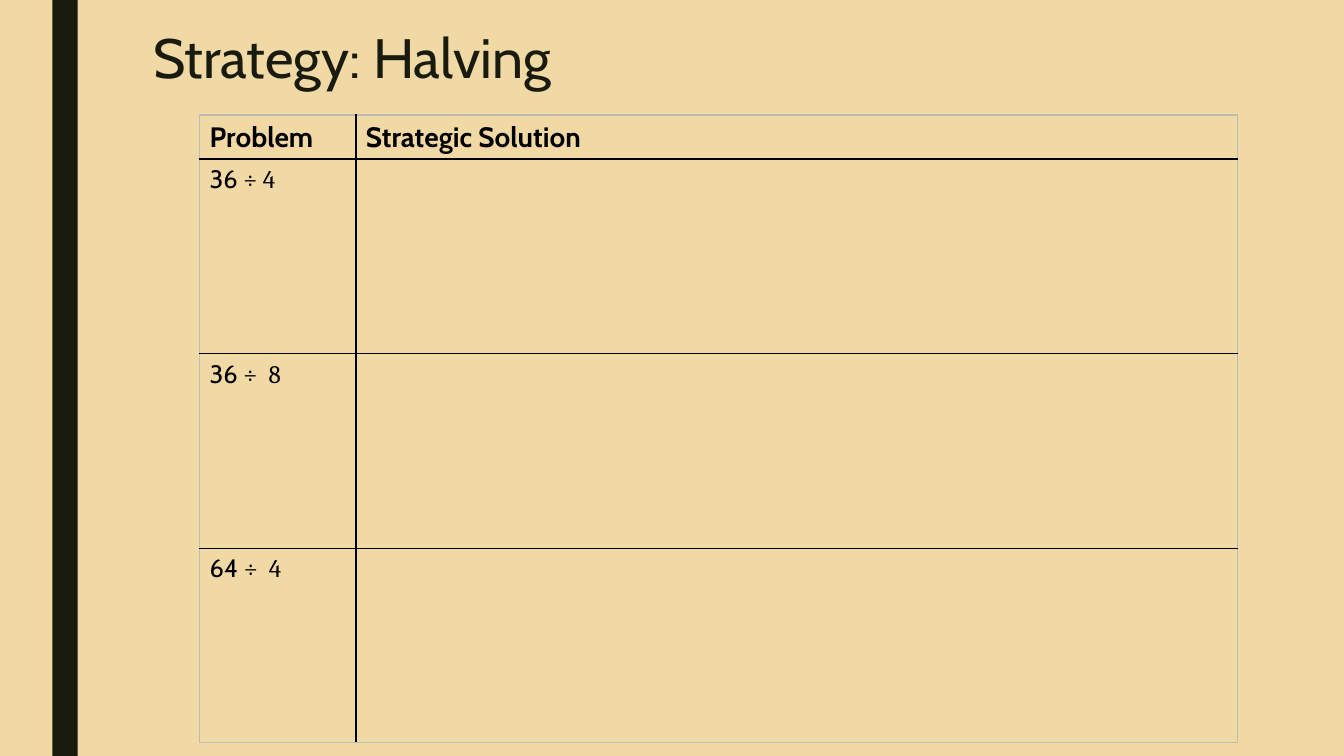
"""Build the halving strategy slide: a title above a table of division problems."""
from lxml import etree
from pptx import Presentation
from pptx.dml.color import RGBColor
from pptx.enum.shapes import MSO_SHAPE
from pptx.enum.text import MSO_ANCHOR
from pptx.oxml.ns import qn
from pptx.util import Inches, Pt

RECTANGLE = MSO_SHAPE.RECTANGLE
MIDDLE = MSO_ANCHOR.MIDDLE
THEME = {
    "sand": "F0D9A5", "bark": "191B0E", "ink": "000000", "edge": "BDBDB5",
    "font": "Cabin", "math": "Cambria",
    "title": 39.6, "header": 20, "body": 18,
    "thin": 1, "thick": 1.5,
}
COLUMNS = [1.55, 8.74]
ROWS = [0.44] + [1.93] * 3
PROBLEMS = [("36 ", "÷ 4"), ("36 ", "÷  8"), ("64 ", "÷  4")]
CONTENT = [[("Problem",), ("Strategic Solution",)]] + [[problem, ()] for problem in PROBLEMS]


def style(font, size, color, bold=False):
    font.name = THEME["font"]
    font.size = Pt(THEME[size])
    font.bold = bold
    font.color.rgb = RGBColor.from_string(THEME[color])


def add_border(cell, side, color, width):
    line = etree.Element(qn(f"a:{side}"), w=str(Pt(THEME[width])))
    fill = etree.SubElement(line, qn("a:solidFill"))
    etree.SubElement(fill, qn("a:srgbClr"), val=THEME[color])
    cell.get_or_add_tcPr().append(line)


deck = Presentation()
deck.slide_width, deck.slide_height = Inches(13.33), Inches(7.5)
page = deck.slides.add_slide(deck.slide_layouts[6])
page.background.fill.solid()
page.background.fill.fore_color.rgb = RGBColor.from_string(THEME["sand"])

stripe = page.shapes.add_shape(RECTANGLE, Inches(0.52), 0, Inches(0.25), deck.slide_height)
stripe.shadow.inherit = False
stripe.fill.solid()
stripe.fill.fore_color.rgb = RGBColor.from_string(THEME["bark"])
stripe.line.fill.background()

title = page.shapes.add_textbox(Inches(1.42), Inches(0.23), Inches(10.5), Inches(0.75))
title.text_frame.word_wrap = True
title.text_frame.vertical_anchor = MIDDLE
para = title.text_frame.paragraphs[0]
para.text = "Strategy: Halving"
para.line_spacing = 0.89
style(para.font, "title", "bark")

table = page.shapes.add_table(
    len(ROWS), len(COLUMNS), Inches(1.98), Inches(1.14),
    Inches(sum(COLUMNS)), Inches(sum(ROWS))).table
table.first_row = table.horz_banding = False
for column, width in zip(table.columns, COLUMNS):
    column.width = Inches(width)
for row, height in zip(table.rows, ROWS):
    row.height = Inches(height)

last_row, last_column = len(ROWS) - 1, len(COLUMNS) - 1
for r, row in enumerate(CONTENT):
    for c, pieces in enumerate(row):
        cell = table.cell(r, c)
        para = cell.text_frame.paragraphs[0]
        style(para.font, "body" if r else "header", "ink", bold=r == 0)
        for i, piece in enumerate(pieces):
            span = para.add_run()
            span.text = piece
            if i:
                span.font.name = THEME["math"]
        for side, outer, thick in (
                ("lnL", c == 0, False), ("lnR", c == last_column, False),
                ("lnT", r == 0, r == 1), ("lnB", r == last_row, r == 0)):
            add_border(cell._tc, side, "edge" if outer else "ink", "thick" if thick else "thin")
        cell.fill.background()

deck.save("out.pptx")
